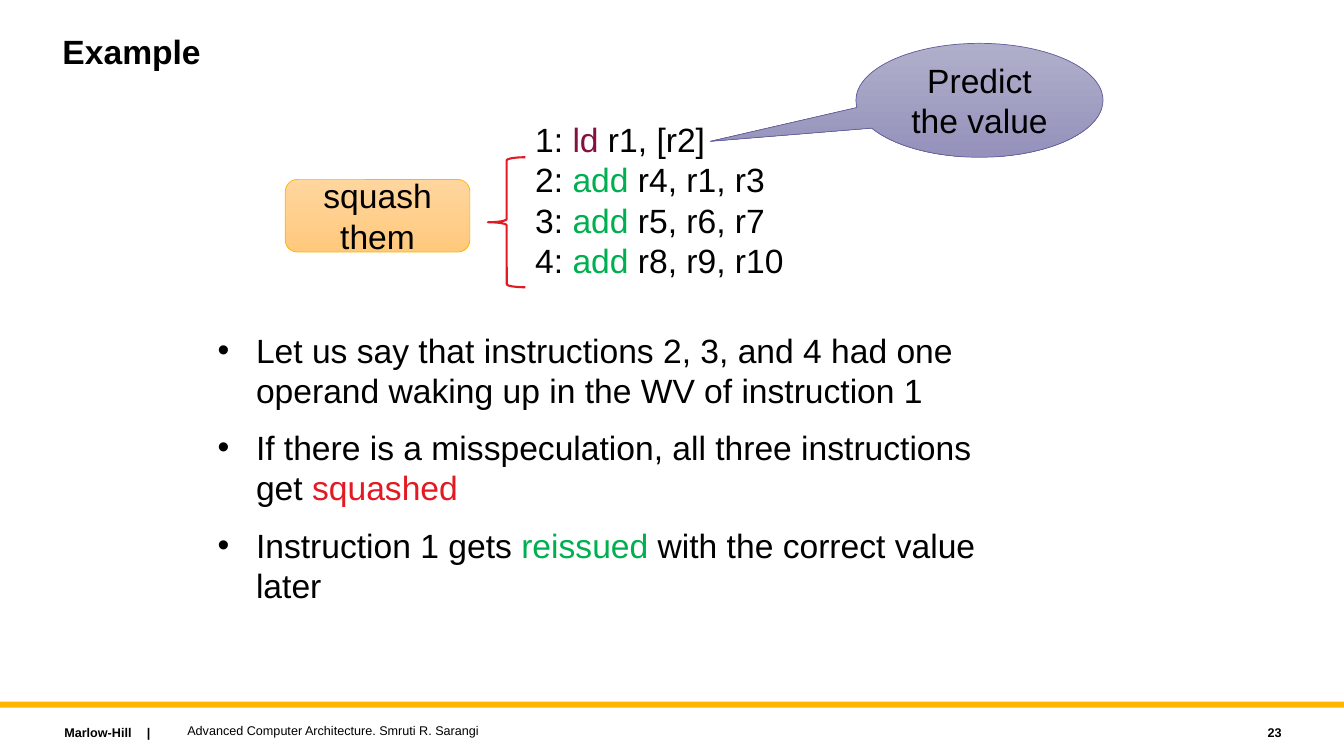
import pptx
import pptx.util
import pptx.dml.color
import pptx.enum.shapes
import pptx.enum.text
import pptx.oxml.ns
from lxml import etree

SHAPE = pptx.enum.shapes.MSO_SHAPE
ALIGN = pptx.enum.text.PP_ALIGN
ANCHOR = pptx.enum.text.MSO_ANCHOR
COLORS = {
    "text": "000000", "gold": "FFB600", "red": "E21A23", "green": "00B050",
    "maroon": "831242", "violet": "625D9C",
    "violet light": "B0AFCA", "violet dark": "9492BB",
    "orange light": "FFD69E", "orange dark": "FFC97C",
}


def rgb(name):
    return pptx.dml.color.RGBColor.from_string(COLORS[name])


class Slide:
    """Style and current slide; boxes are left, top, width, height in percent."""

    font = "Arial"
    size = 24
    small = 9

    def __init__(self, deck):
        self.deck = deck
        self.slide = deck.slides.add_slide(deck.slide_layouts[1])

    def box(self, left, top, width, height):
        across, down = self.deck.slide_width / 100, self.deck.slide_height / 100
        return [round(v) for v in (left * across, top * down, width * across, height * down)]

    def place(self, shape, box):
        shape.left, shape.top, shape.width, shape.height = self.box(*box)

    def frame(self, shape, anchor):
        frame = shape.text_frame
        frame.word_wrap = True
        frame.auto_size = pptx.enum.text.MSO_AUTO_SIZE.NONE
        frame.vertical_anchor = anchor
        return frame

    def properties(self, paragraph, tag, **attributes):
        """Append a child element to the paragraph's properties."""
        parent = paragraph._p.get_or_add_pPr()
        return etree.SubElement(parent, pptx.oxml.ns.qn(tag), **attributes)

    def fill_paragraph(self, paragraph, parts, size=None, bold=False, align=ALIGN.LEFT):
        """Fill a paragraph with plain strings and (string, colour) pairs."""
        paragraph.alignment = align
        paragraph.font.name = self.font
        paragraph.font.size = pptx.util.Pt(size or self.size)
        paragraph.font.bold = bold
        paragraph.font.color.rgb = rgb("text")
        for part in parts:
            words, color = (part, None) if isinstance(part, str) else part
            run = paragraph.add_run()
            run.text = words
            if color:
                run.font.color.rgb = rgb(color)

    def paragraphs(self, frame, count):
        return [frame.paragraphs[0]] + [frame.add_paragraph() for _ in range(count - 1)]

    def title(self, words, box):
        heading = self.slide.shapes.title
        self.place(heading, box)
        paragraph = self.frame(heading, ANCHOR.TOP).paragraphs[0]
        paragraph.line_spacing = 0.9
        self.fill_paragraph(paragraph, [words], bold=True)

    def bullets(self, points, box, indent=0.38, gap=12):
        body = self.slide.placeholders[1]
        self.place(body, box)
        frame = self.frame(body, ANCHOR.TOP)
        for i, paragraph in enumerate(self.paragraphs(frame, len(points))):
            margin = pptx.util.Inches(indent)
            properties = paragraph._p.get_or_add_pPr()
            properties.set("marL", str(margin))
            properties.set("indent", str(-margin))
            self.properties(paragraph, "a:buFont", typeface=self.font)
            self.properties(paragraph, "a:buChar", char="•")
            paragraph.space_before = pptx.util.Pt(gap if i else 0)
            self.fill_paragraph(paragraph, points[i])

    def text(self, lines, box, anchor=ANCHOR.MIDDLE, tab=None, **style):
        frame = self.frame(self.slide.shapes.add_textbox(*self.box(*box)), anchor)
        for paragraph, parts in zip(self.paragraphs(frame, len(lines)), lines):
            if tab:
                stops = self.properties(paragraph, "a:tabLst")
                etree.SubElement(stops, pptx.oxml.ns.qn("a:tab"),
                                 pos=str(pptx.util.Inches(tab)), algn="l")
            self.fill_paragraph(paragraph, parts, **style)

    def shape(self, kind, box, fill=(), line=None, width=0.5, words=None):
        """One fill colour is solid, two are a gradient from top to bottom."""
        shape = self.slide.shapes.add_shape(kind, *self.box(*box))
        shape.shadow.inherit = False
        if len(fill) == 2:
            shape.fill.gradient()
            shape.fill.gradient_angle = 270
            for stop, color in zip(shape.fill.gradient_stops, fill):
                stop.color.rgb = rgb(color)
        elif fill:
            shape.fill.solid()
            shape.fill.fore_color.rgb = rgb(fill[0])
        else:
            shape.fill.background()
        if line:
            shape.line.color.rgb = rgb(line)
            shape.line.width = pptx.util.Pt(width)
        else:
            shape.line.fill.background()
        if words:
            paragraph = self.frame(shape, ANCHOR.MIDDLE).paragraphs[0]
            self.fill_paragraph(paragraph, [words], align=ALIGN.CENTER)
        return shape


def main():
    deck = pptx.Presentation()
    deck.slide_width = pptx.util.Inches(13.33)
    deck.slide_height = pptx.util.Inches(7.5)
    example = Slide(deck)

    # Title and explanation
    example.title("Example", (3.9, 4, 75, 12))
    example.bullets([
        ["Let us say that instructions 2, 3, and 4 had one operand waking up "
         "in the WV of instruction 1"],
        ["If there is a misspeculation, all three instructions get ", ("squashed", "red")],
        ["Instruction 1 gets ", ("reissued", "green"), " with the correct value later"],
    ], (15.45, 42.93, 58.29, 45.07))

    # Instruction listing
    instructions = [
        ("ld", "maroon", "r1, [r2]"),
        ("add", "green", "r4, r1, r3"),
        ("add", "green", "r5, r6, r7"),
        ("add", "green", "r8, r9, r10"),
    ]
    example.text([[f"{number}: ", (opcode, color), f" {operands}"]
                  for number, (opcode, color, operands) in enumerate(instructions, 1)],
                 (39.08, 15.07, 21.83, 22.93), anchor=ANCHOR.TOP)

    # Notes on the instructions
    prediction = example.shape(SHAPE.OVAL_CALLOUT, (63.69, 5.73, 18.38, 15.07),
                               ("violet light", "violet dark"), "violet",
                               words="Predict the value")
    prediction.adjustments[0] = -1.09
    prediction.adjustments[1] = 0.36
    example.shape(SHAPE.LEFT_BRACE, (36.31, 20.8, 2.78, 17.2), line="red", width=1.5)
    example.shape(SHAPE.ROUNDED_RECTANGLE, (21.23, 23.73, 13.73, 9.6),
                  ("orange light", "orange dark"), "gold", words="squash them")

    # Footer
    example.shape(SHAPE.RECTANGLE, (0, 92.8, 100, 0.8), ["gold"])
    example.text([["Marlow-Hill\t|"]], (4.05, 95.2, 17.03, 3.33), tab=0.82,
                 size=example.small, bold=True)
    example.text([["Advanced Computer Architecture. Smruti R. Sarangi"]],
                 (13.2, 94.93, 60, 3.33), size=example.small)
    example.text([["23"]], (85.6, 95.2, 10.5, 3.33), size=example.small,
                 bold=True, align=ALIGN.RIGHT)

    deck.save("out.pptx")


if __name__ == "__main__":
    main()
